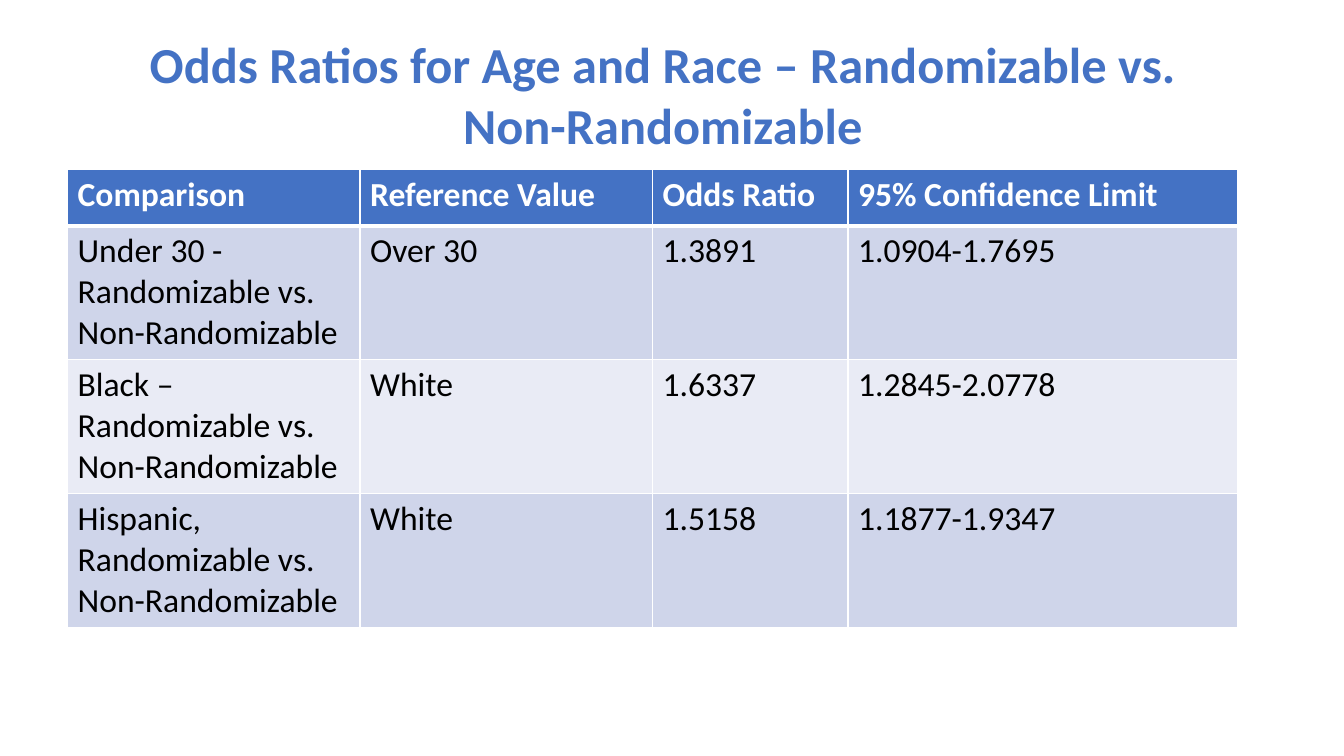
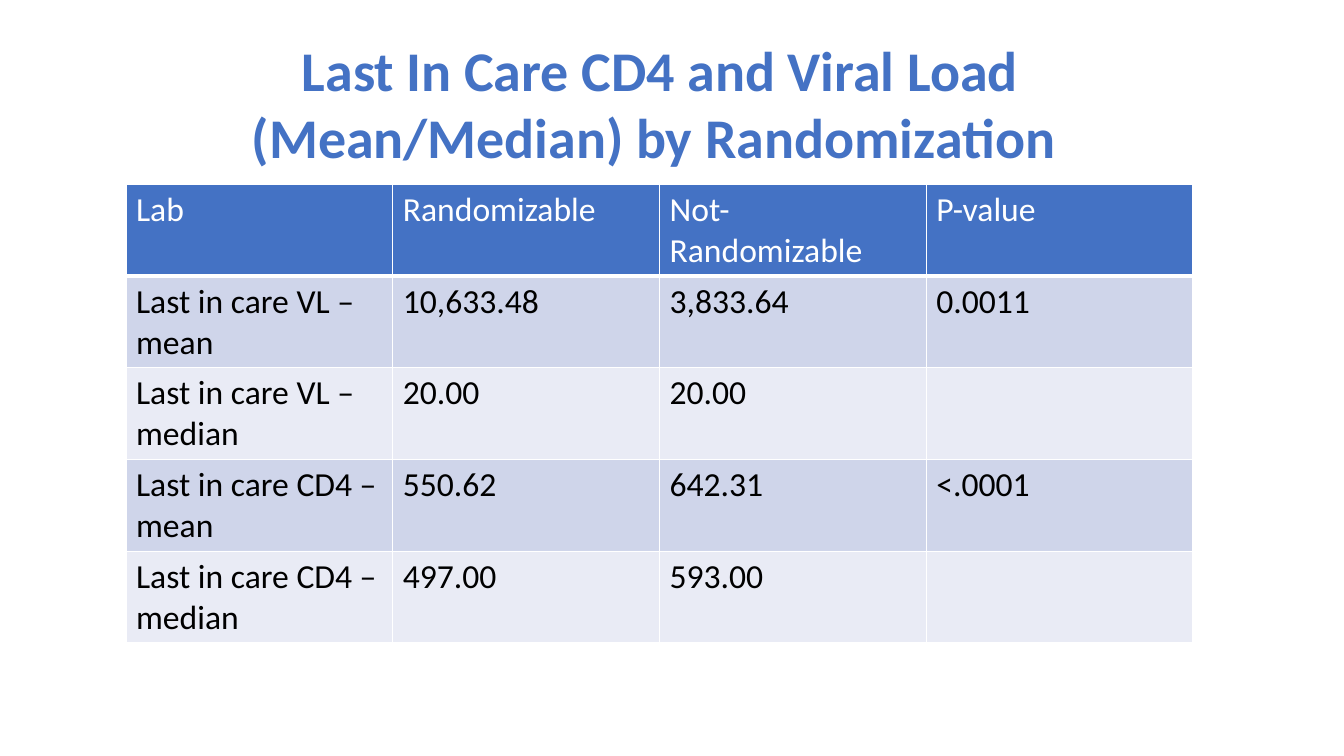
"""Build two slides that each hold a centred title over a banded table."""
from lxml.etree import SubElement
from pptx import Presentation
from pptx.dml.color import RGBColor
from pptx.enum.text import MSO_ANCHOR, PP_ALIGN
from pptx.oxml.ns import qn
from pptx.util import Inches, Pt

COLORS = {
    "accent": "4472C4",
    "band_dark": "CFD5EA",
    "band_light": "E9EBF5",
    "white": "FFFFFF",
    "black": "000000",
}
SLIDE_WIDTH = Inches(13.33)
SLIDE_HEIGHT = Inches(7.5)
THIN, THICK = 1, 3

TITLE_FORMAT = {"name": "Calibri", "bold": True}
CELL_FORMAT = {"name": "Calibri", "size": Pt(24)}

ODDS_RATIOS = [
    ["Comparison", "Reference Value", "Odds Ratio", "95% Confidence Limit"],
    ["Under 30 - Randomizable vs. Non-Randomizable", "Over 30", "1.3891", "1.0904-1.7695"],
    ["Black – Randomizable vs. Non-Randomizable", "White", "1.6337", "1.2845-2.0778"],
    ["Hispanic, Randomizable vs. Non-Randomizable", "White", "1.5158", "1.1877-1.9347"],
]
LAB_RESULTS = [
    ["Lab", "Randomizable", "Not-Randomizable", "P-value"],
    ["Last in care VL – mean", "10,633.48", "3,833.64", "0.0011"],
    ["Last in care VL – median", "20.00", "20.00", ""],
    ["Last in care CD4 – mean", "550.62", "642.31", "<.0001"],
    ["Last in care CD4 – median", "497.00", "593.00", ""],
]


def across(percent):
    """Return a share of the slide's width."""
    return round(SLIDE_WIDTH * percent / 100)


def down(percent):
    """Return a share of the slide's height."""
    return round(SLIDE_HEIGHT * percent / 100)


def add_text(para, text, color, formats):
    """Add one span of text with the given colour and font settings."""
    span = para.add_run()
    span.text = text
    span.font.color.rgb = RGBColor.from_string(COLORS[color])
    for name, value in formats.items():
        setattr(span.font, name, value)


def add_title(page, text, size, left, top, width, height):
    """Add a centred title, placed by percentages of the slide."""
    box = page.shapes.add_textbox(across(left), down(top), across(width), down(height))
    frame = box.text_frame
    frame.word_wrap = True
    frame.vertical_anchor = MSO_ANCHOR.TOP
    para = frame.paragraphs[0]
    para.alignment = PP_ALIGN.CENTER
    add_text(para, text, "accent", {**TITLE_FORMAT, "size": Pt(size)})


def set_borders(cell, widths):
    """Draw white borders, with widths in points by side."""
    properties = cell._tc.get_or_add_tcPr()
    for side, width in widths.items():
        line = SubElement(properties, qn(f"a:ln{side}"), w=str(Pt(width)))
        fill = SubElement(line, qn("a:solidFill"))
        SubElement(fill, qn("a:srgbClr"), val=COLORS["white"])


def style_cell(cell, text, row, bold_header):
    """Fill one cell according to its row and write its text."""
    header = row == 0
    set_borders(cell, {
        "L": THIN,
        "R": THIN,
        "T": THICK if row == 1 else THIN,
        "B": THICK if header else THIN,
    })
    fill = "accent" if header else "band_dark" if row % 2 else "band_light"
    cell.fill.solid()
    cell.fill.fore_color.rgb = RGBColor.from_string(COLORS[fill])
    if text:
        formats = {**CELL_FORMAT, "bold": header and bold_header}
        add_text(cell.text_frame.paragraphs[0], text, "white" if header else "black", formats)


def add_data_table(page, data, left, top, columns, rows, bold_header):
    """Add a banded table with column and row sizes in percent."""
    table = page.shapes.add_table(
        len(rows), len(columns), across(left), down(top),
        across(sum(columns)), down(sum(rows)),
    ).table
    for column, width in zip(table.columns, columns):
        column.width = across(width)
    for row, height in zip(table.rows, rows):
        row.height = down(height)
    for row, texts in enumerate(data):
        for column, text in enumerate(texts):
            style_cell(table.cell(row, column), text, row, bold_header)


def main():
    """Build and save the deck."""
    deck = Presentation()
    deck.slide_width, deck.slide_height = SLIDE_WIDTH, SLIDE_HEIGHT
    blank = deck.slide_layouts[6]

    page = deck.slides.add_slide(blank)
    add_data_table(page, ODDS_RATIOS, 5.03, 22.4, [21.76, 21.76, 14.55, 28.96],
                   [7.47] + [17.73] * 3, bold_header=True)
    add_title(page, "Odds Ratios for Age and Race – Randomizable vs. Non-Randomizable",
              36, 8.63, 3.73, 81.4, 17.47)

    page = deck.slides.add_slide(blank)
    add_data_table(page, LAB_RESULTS, 9.38, 24.4, [19.85] * 4,
                   [12.13] * 5, bold_header=False)
    add_title(page, "Last In Care CD4 and Viral Load (Mean/Median) by Randomization ",
              40, 15.45, 4, 67.3, 19.33)

    deck.save("out.pptx")


if __name__ == "__main__":
    main()
